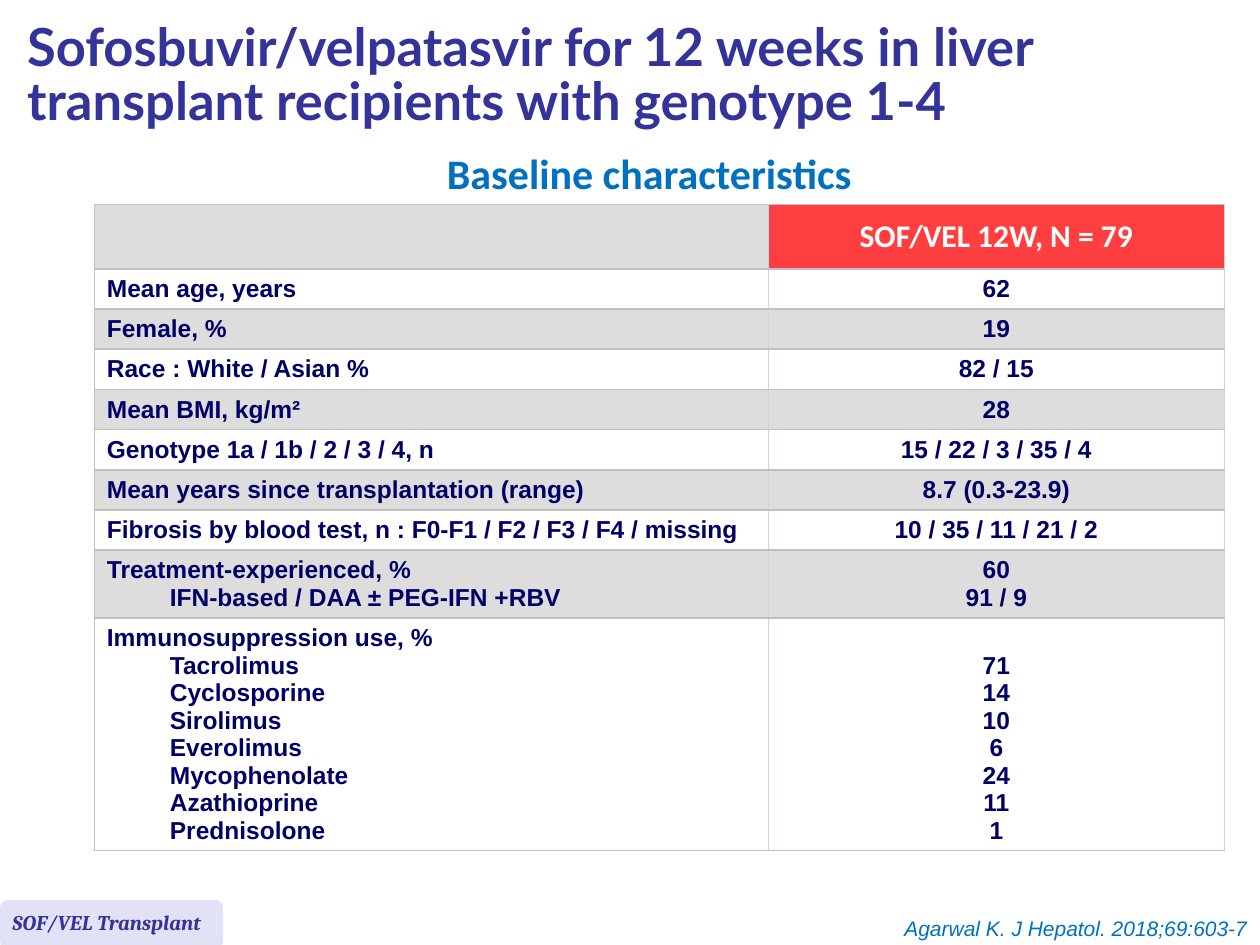
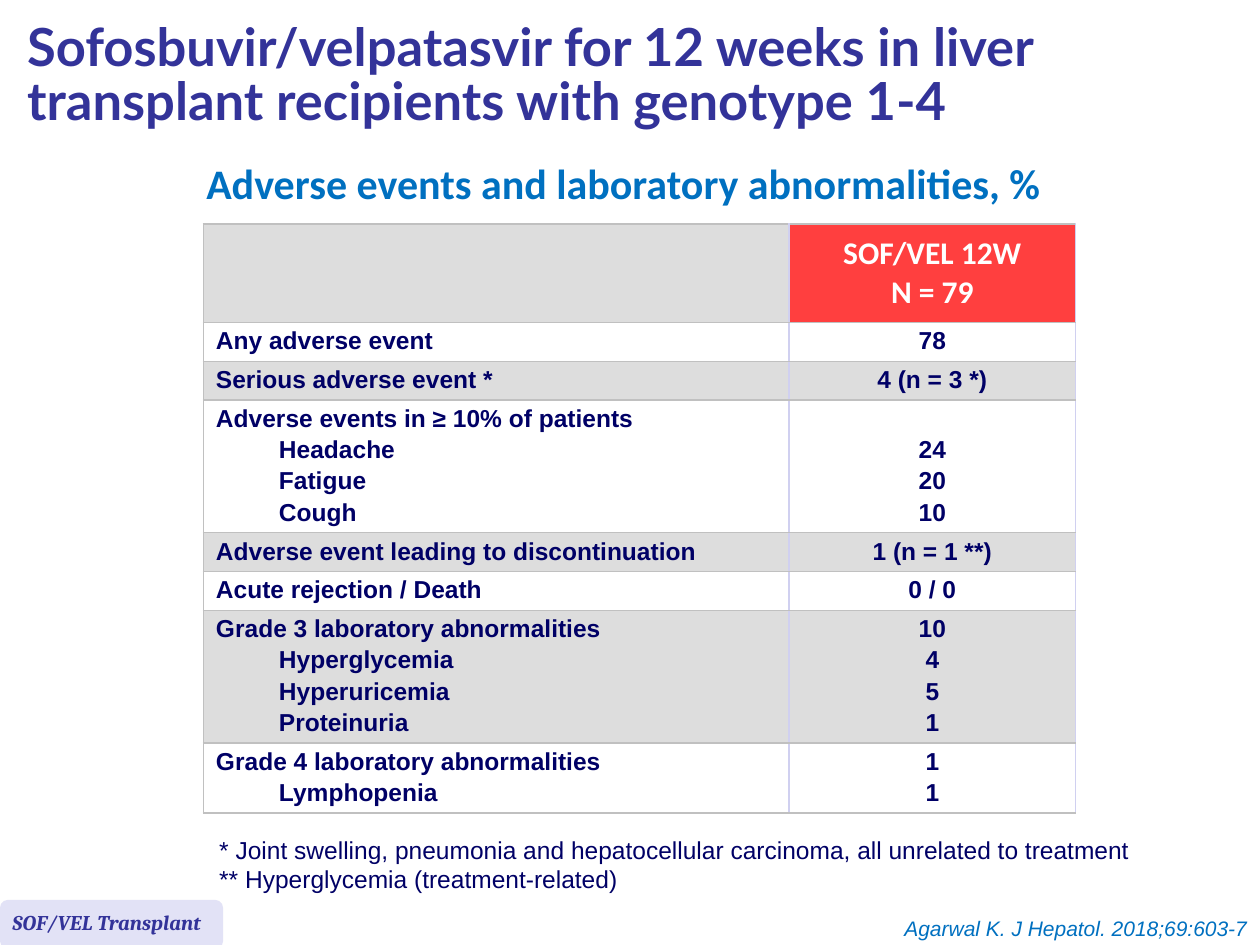
from lxml import etree
from pptx import Presentation
from pptx.dml.color import RGBColor
from pptx.enum.shapes import MSO_SHAPE
from pptx.enum.text import MSO_ANCHOR, PP_ALIGN
from pptx.oxml.ns import qn
from pptx.util import Cm, Pt

LEFT, CENTER, RIGHT = PP_ALIGN.LEFT, PP_ALIGN.CENTER, PP_ALIGN.RIGHT
TOP, MIDDLE, BOTTOM = MSO_ANCHOR.TOP, MSO_ANCHOR.MIDDLE, MSO_ANCHOR.BOTTOM
ROUNDED = MSO_SHAPE.ROUNDED_RECTANGLE

# Shared content and colours
TITLE = "Sofosbuvir/velpatasvir for 12 weeks in liver transplant recipients with genotype 1-4"
CITATION = "Agarwal K. J Hepatol. 2018;69:603-7"
BADGE = "SOF/VEL Transplant"
INDIGO, BLUE, NAVY, WHITE = "333399", "0070C0", "000066", "FFFFFF"
RED, GREY, LAVENDER = "FF3F3F", "DDDDDD", "E2E2F6"
GREY_RULE, LILAC_RULE = "C0C0C0", "D0D0F0"
CELL_PADDING = 0.25  # top and bottom insets together, cm

# Each row: label lines (the first is the heading, the rest are indented), value lines
SLIDES = [
    dict(
        subtitle="Baseline characteristics",
        subtitle_box=(1.09, 3.33, 24, 0.89), subtitle_align=CENTER, subtitle_spacing=15.2,
        table_at=(1.9, 4.12), columns=(13.59, 9.19), header_height=1.3,
        header=["SOF/VEL 12W, N = 79"],
        line_height=0.55, line_gap=0, text_format={},
        rows=[
            (["Mean age, years"], ["62"]),
            (["Female, %"], ["19"]),
            (["Race : White / Asian %"], ["82 / 15"]),
            (["Mean BMI, kg/m²"], ["28"]),
            (["Genotype 1a / 1b / 2 / 3 / 4, n"], ["15 / 22 / 3 / 35 / 4"]),
            (["Mean years since transplantation (range)"], ["8.7 (0.3-23.9)"]),
            (["Fibrosis by blood test, n : F0-F1 / F2 / F3 / F4 / missing"],
             ["10 / 35 / 11 / 21 / 2"]),
            (["Treatment-experienced, %", "IFN-based / DAA ± PEG-IFN +RBV"], ["60", "91 / 9"]),
            (["Immunosuppression use, %", "Tacrolimus", "Cyclosporine", "Sirolimus",
              "Everolimus", "Mycophenolate", "Azathioprine", "Prednisolone"],
             ["71", "14", "10", "6", "24", "11", "1"]),
        ],
        notes=[],
    ),
    dict(
        subtitle="Adverse events and laboratory abnormalities, %",
        subtitle_box=(3.91, 3.53, 18, 0.86), subtitle_align=LEFT, subtitle_spacing=15,
        table_at=(4.1, 4.52), columns=(11.81, 5.77), header_height=1.98,
        header=["SOF/VEL 12W", "N = 79"],
        line_height=0.53, line_gap=0.1, text_format=dict(spacing=Pt(15), before=2.8),
        rows=[
            (["Any adverse event"], ["78"]),
            (["Serious adverse event *"], ["4 (n = 3 *)"]),
            (["Adverse events in ≥ 10% of patients", "Headache", "Fatigue", "Cough"],
             ["24", "20", "10"]),
            (["Adverse event leading to discontinuation"], ["1 (n = 1 **)"]),
            (["Acute rejection / Death"], ["0 / 0"]),
            (["Grade 3 laboratory abnormalities", "Hyperglycemia", "Hyperuricemia",
              "Proteinuria"], ["10", "4", "5", "1"]),
            (["Grade 4 laboratory abnormalities", "Lymphopenia"], ["1", "1"]),
        ],
        notes=["* Joint swelling, pneumonia and hepatocellular carcinoma, "
               "all unrelated to treatment",
               "** Hyperglycemia (treatment-related)"],
    ),
]


def rgb(color):
    return RGBColor.from_string(color)


def write(tf, lines, size=14, font="Arial", color=NAVY, bold=False, italic=False,
          align=LEFT, spacing=None, before=0, indent=0):
    """Write one paragraph per line; lines after the first take indent and space before."""
    for i, line in enumerate(lines):
        p = tf.paragraphs[0] if i == 0 else tf.add_paragraph()
        p.alignment = align
        if spacing:
            p.line_spacing = spacing
        if i and before:
            p.space_before = Pt(before)
        if i and indent:
            p._p.get_or_add_pPr().set("marL", str(Cm(indent)))
        r = p.add_run()
        r.text = line
        r.font.size, r.font.name = Pt(size), font
        r.font.bold, r.font.italic = bold, italic
        r.font.color.rgb = rgb(color)


def add_text(slide, box, lines, anchor=TOP, **text_format):
    tf = slide.shapes.add_textbox(*map(Cm, box)).text_frame
    tf.word_wrap = True
    tf.vertical_anchor = anchor
    write(tf, lines, **text_format)


def style_cell(cell, fill, left_rule):
    # Border elements must precede the fill
    tc_pr = cell._tc.get_or_add_tcPr()
    for side, color in (("lnL", left_rule), ("lnR", LILAC_RULE),
                        ("lnT", GREY_RULE), ("lnB", GREY_RULE)):
        ln = etree.SubElement(tc_pr, qn("a:" + side), w=str(Pt(1)))
        solid = etree.SubElement(ln, qn("a:solidFill"))
        etree.SubElement(solid, qn("a:srgbClr"), val=color)
    cell.fill.solid()
    cell.fill.fore_color.rgb = rgb(fill)


def add_results(slide, data):
    """Two-column table: labels, and the values of the treated group."""
    rows, columns = data["rows"], data["columns"]
    heights = [data["header_height"]] + [
        len(labels) * data["line_height"] + (len(labels) - 1) * data["line_gap"] + CELL_PADDING
        for labels, _ in rows]
    left, top = data["table_at"]
    table = slide.shapes.add_table(len(heights), 2, Cm(left), Cm(top),
                                   Cm(sum(columns)), Cm(sum(heights))).table
    table.first_row = table.horz_banding = False
    for column, width in zip(table.columns, columns):
        column.width = Cm(width)
    for row, height in zip(table.rows, heights):
        row.height = Cm(height)

    # Header
    style_cell(table.cell(0, 0), GREY, GREY_RULE)
    header = table.cell(0, 1)
    style_cell(header, RED, LILAC_RULE)
    header.vertical_anchor = MIDDLE
    write(header.text_frame, data["header"], size=18, font="Calibri", color=WHITE,
          bold=True, align=CENTER)

    # Body: values without a heading value sit beside the indented labels
    for i, (labels, values) in enumerate(rows, start=1):
        fill = WHITE if i % 2 else GREY
        label, value = table.cell(i, 0), table.cell(i, 1)
        style_cell(label, fill, GREY_RULE)
        style_cell(value, fill, LILAC_RULE)
        label.vertical_anchor = MIDDLE
        value.vertical_anchor = BOTTOM if len(values) < len(labels) else MIDDLE
        write(label.text_frame, labels, bold=True, indent=1.27, **data["text_format"])
        write(value.text_frame, values, bold=True, align=CENTER, **data["text_format"])


def add_frame(slide):
    """Title, citation and badge found on every slide."""
    add_text(slide, (0.3, 0.2, 25.1, 2.72), [TITLE], anchor=MIDDLE, size=30, font="Lato",
             color=INDIGO, bold=True, spacing=0.85)
    add_text(slide, (6.7, 18.34, 18.7, 0.76), [CITATION], size=12, color=BLUE,
             italic=True, align=RIGHT)
    badge = slide.shapes.add_shape(ROUNDED, Cm(0), Cm(18.14), Cm(4.5), Cm(0.99))
    badge.shadow.inherit = False
    badge.fill.solid()
    badge.fill.fore_color.rgb = rgb(LAVENDER)
    badge.line.fill.background()
    add_text(slide, (0, 18.21, 4.65, 0.76), [BADGE], size=12, font="Cambria",
             color=INDIGO, bold=True, italic=True)


def main():
    prs = Presentation()
    prs.slide_width, prs.slide_height = Cm(25.4), Cm(19.05)
    for data in SLIDES:
        slide = prs.slides.add_slide(prs.slide_layouts[6])
        add_results(slide, data)
        add_text(slide, data["subtitle_box"], [data["subtitle"]], size=24, font="Calibri",
                 color=BLUE, bold=True, align=data["subtitle_align"],
                 spacing=Pt(data["subtitle_spacing"]))
        if data["notes"]:
            add_text(slide, (4.17, 16.71, 19.74, 1.45), data["notes"])
        add_frame(slide)
    prs.save("out.pptx")


if __name__ == "__main__":
    main()
